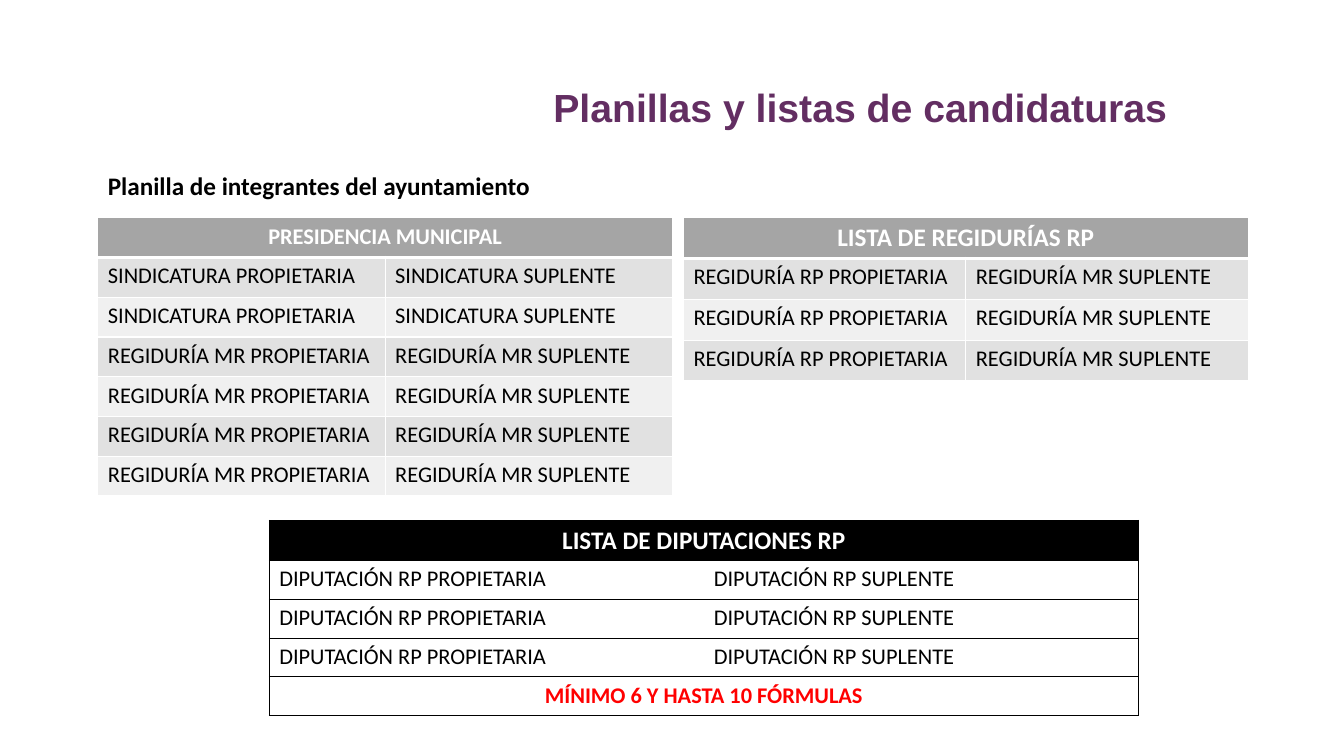
"""Build the slide on candidate slates and lists."""
from lxml.etree import SubElement
from pptx import Presentation
from pptx.dml.color import RGBColor
from pptx.enum.text import MSO_ANCHOR, PP_ALIGN
from pptx.oxml.ns import qn
from pptx.util import Inches, Pt

COLORS = {"purple": "632E62", "black": "000000", "white": "FFFFFF", "red": "FF0000",
          "gray": "A5A5A5", "dark_band": "E1E1E1", "light_band": "F0F0F0"}

FORMATS = {
    "title": {"name": "Arial", "size": Pt(28), "bold": True, "color": "purple"},
    "subtitle": {"name": "Calibri", "size": Pt(18), "bold": True, "color": "black"},
    "small_header": {"name": "Calibri", "size": Pt(16), "bold": True, "color": "white"},
    "header": {"name": "Calibri", "size": Pt(18), "bold": True, "color": "white"},
    "body": {"name": "Calibri", "size": Pt(16), "bold": False, "color": "black"},
    "note": {"name": "Calibri", "size": Pt(16), "bold": True, "color": "red"},
}

TEXTS = [
    {"text": "Planillas y listas de candidaturas", "format": "title",
     "area": (40.44, 9.07, 48.84, 8.93), "wrap": True,
     "anchor": MSO_ANCHOR.BOTTOM, "align": PP_ALIGN.JUSTIFY, "spacing": 0.9},
    {"text": "Planilla de integrantes del ayuntamiento", "format": "subtitle",
     "area": (7.28, 21.87, 33.16, 5.33), "wrap": False,
     "anchor": MSO_ANCHOR.TOP, "align": PP_ALIGN.LEFT, "spacing": 1.0},
]

SINDICATURA = ("SINDICATURA PROPIETARIA", "SINDICATURA SUPLENTE")
REGIDURIA_MR = ("REGIDURÍA MR PROPIETARIA", "REGIDURÍA MR SUPLENTE")
REGIDURIA_RP = ("REGIDURÍA RP PROPIETARIA", "REGIDURÍA MR SUPLENTE")
DIPUTACION = ("DIPUTACIÓN RP PROPIETARIA", "DIPUTACIÓN RP SUPLENTE")

TABLES = [
    {"place": (7.28, 28.8, 42.76), "heights": (5.26, 5.26), "banded": True,
     "header_format": "small_header",
     "rows": [("PRESIDENCIA MUNICIPAL",)] + [SINDICATURA] * 2 + [REGIDURIA_MR] * 4},
    {"place": (50.86, 28.8, 42.01), "heights": (5.4, 5.4), "banded": True,
     "header_format": "header",
     "rows": [("LISTA DE REGIDURÍAS RP",)] + [REGIDURIA_RP] * 3},
    {"place": (20.03, 68.8, 64.67), "heights": (5.33, 5.13), "banded": False,
     "header_format": "header",
     "rows": [("LISTA DE DIPUTACIONES RP",)] + [DIPUTACION] * 3
     + [("MÍNIMO 6 Y HASTA 10 FÓRMULAS",)]},
]

presentation = Presentation()
presentation.slide_width = Inches(13.33)
presentation.slide_height = Inches(7.5)
slide = presentation.slides.add_slide(presentation.slide_layouts[6])


def across(percent):
    return int(presentation.slide_width * percent / 100)


def down(percent):
    return int(presentation.slide_height * percent / 100)


def write(paragraph, text, format_name, align):
    run = paragraph.add_run()
    run.text = text
    paragraph.alignment = align
    for attribute, value in FORMATS[format_name].items():
        if attribute == "color":
            run.font.color.rgb = RGBColor.from_string(COLORS[value])
        else:
            setattr(run.font, attribute, value)


def add_text(item):
    left, top, width, height = item["area"]
    box = slide.shapes.add_textbox(across(left), down(top), across(width), down(height))
    frame = box.text_frame
    frame.word_wrap = item["wrap"]
    frame.vertical_anchor = item["anchor"]
    paragraph = frame.paragraphs[0]
    paragraph.line_spacing = item["spacing"]
    write(paragraph, item["text"], item["format"], item["align"])


def set_borders(cell, borders):
    properties = cell._tc.get_or_add_tcPr()
    for side in "LRTB":
        color, points = borders[side]
        line = SubElement(properties, qn(f"a:ln{side}"), w=str(Pt(points)))
        if color is None:
            SubElement(line, qn("a:noFill"))
        else:
            solid = SubElement(line, qn("a:solidFill"))
            SubElement(solid, qn("a:srgbClr"), val=COLORS[color])


def cell_borders(banded, row, column, merged):
    if banded:
        borders = {side: ("white", 1) for side in "LRTB"}
        if row < 2:
            borders["B" if row == 0 else "T"] = ("white", 3)
        return borders
    borders = {side: ("black", 0.5) for side in "LRTB"}
    if column == 0:
        borders["R"] = (None, 0.5)
    else:
        borders["L"] = (None, 0.5)
    if merged and column == 0:
        borders["R"] = ("black", 0.5)
    return borders


def cell_fill(banded, row):
    if row == 0:
        return "gray" if banded else "black"
    if banded:
        return "dark_band" if row % 2 else "light_band"
    return None


def add_list(item):
    left, top, width = item["place"]
    header_height, row_height = item["heights"]
    rows = item["rows"]
    heights = [header_height] + [row_height] * (len(rows) - 1)
    table = slide.shapes.add_table(len(rows), 2, across(left), down(top),
                                   across(width), down(sum(heights))).table
    table.first_row = table.horz_banding = False
    for row, (texts, height) in enumerate(zip(rows, heights)):
        table.rows[row].height = down(height)
        merged = len(texts) == 1
        if merged:
            table.cell(row, 0).merge(table.cell(row, 1))
        body_format = "note" if merged else "body"
        format_name = item["header_format"] if row == 0 else body_format
        for column in range(2):
            cell = table.cell(row, column)
            set_borders(cell, cell_borders(item["banded"], row, column, merged))
            fill = cell_fill(item["banded"], row)
            if fill:
                cell.fill.solid()
                cell.fill.fore_color.rgb = RGBColor.from_string(COLORS[fill])
            else:
                cell.fill.background()
            if column < len(texts):
                write(cell.text_frame.paragraphs[0], texts[column], format_name,
                      PP_ALIGN.CENTER if merged else PP_ALIGN.LEFT)


for text_item in TEXTS:
    add_text(text_item)
for table_item in TABLES:
    add_list(table_item)
presentation.save("out.pptx")
